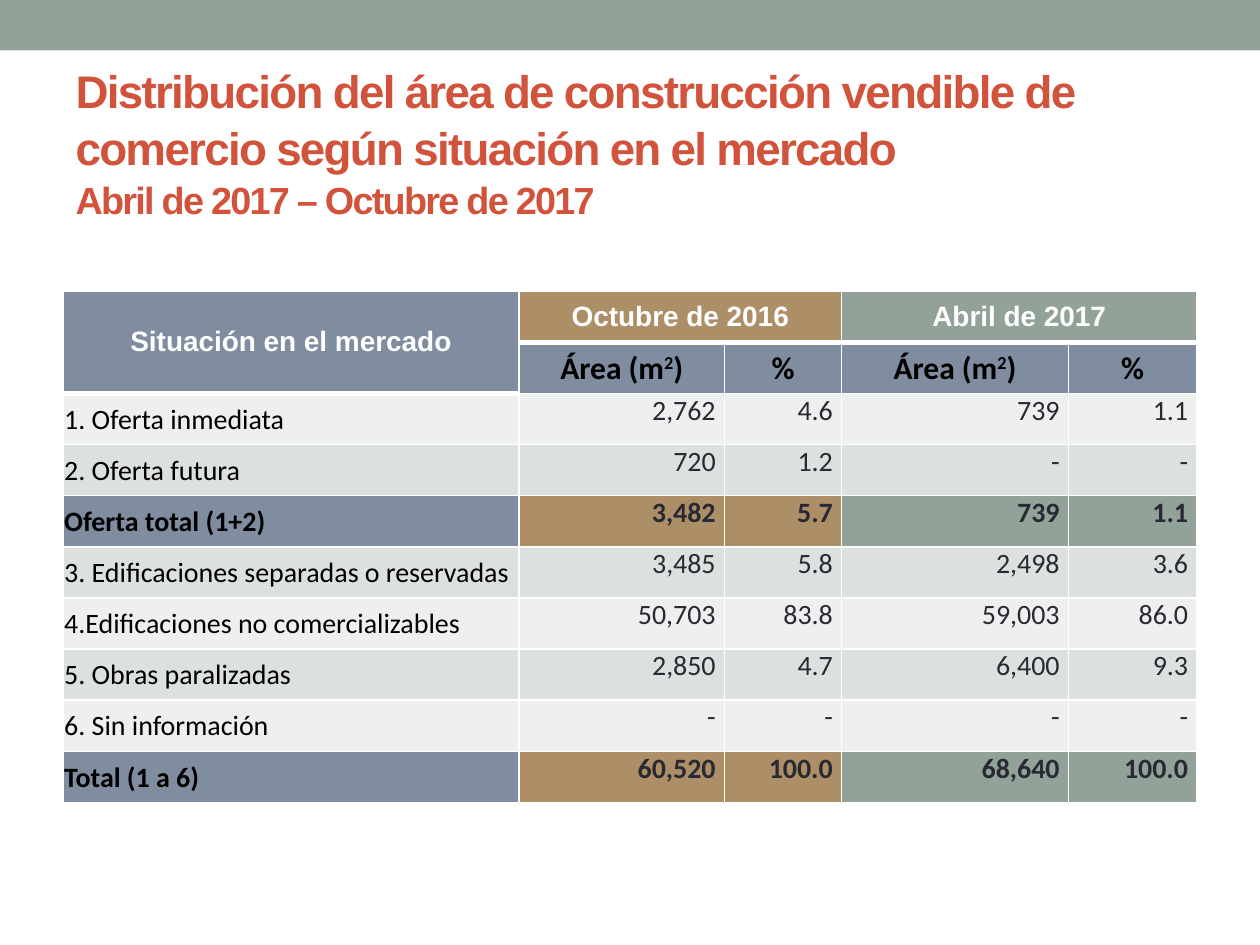
import pptx
import pptx.util
import pptx.dml.color
import pptx.enum.shapes
import pptx.enum.text
import pptx.oxml.ns
import lxml.etree

Inches = pptx.util.Inches
Pt = pptx.util.Pt
RGBColor = pptx.dml.color.RGBColor
Align = pptx.enum.text.PP_ALIGN
Anchor = pptx.enum.text.MSO_ANCHOR
qn = pptx.oxml.ns.qn

SAGE = RGBColor(0x93, 0xA2, 0x99)
SLATE = RGBColor(0x80, 0x8D, 0xA0)
TAN = RGBColor(0xAD, 0x8F, 0x67)
RUST = RGBColor(0xD2, 0x53, 0x3C)
PALE = RGBColor(0xEE, 0xF0, 0xEF)
GREY = RGBColor(0xDC, 0xE0, 0xDE)
INK = RGBColor(0x29, 0x29, 0x34)
BLACK = RGBColor(0, 0, 0)
WHITE = RGBColor(0xFF, 0xFF, 0xFF)

WIDTHS = [3.62, 1.63, 0.93, 1.8, 1.02]
HEADS = {0: "Situación en el mercado", 1: "Octubre de 2016", 3: "Abril de 2017"}
UNITS = [("Área (m", "2", ")"), ("%",)] * 2
ROWS = [
    ("1. Oferta inmediata", "2,762", "4.6", "739", "1.1"),
    ("2. Oferta futura", "720", "1.2", "-", "-"),
    ("Oferta total (1+2)", "3,482", "5.7", "739", "1.1"),
    ("3. Edificaciones separadas o reservadas", "3,485", "5.8", "2,498", "3.6"),
    ("4.Edificaciones no comercializables", "50,703", "83.8", "59,003", "86.0"),
    ("5. Obras paralizadas", "2,850", "4.7", "6,400", "9.3"),
    ("6. Sin información", "-", "-", "-", "-"),
    ("Total (1 a 6)", "60,520", "100.0", "68,640", "100.0"),
]
SUMS = [SLATE, TAN, TAN, SAGE, SAGE]

# Format values: font, then cell
HEAD = {"name": "Arial", "size": Pt(16), "bold": True}
UNIT = {"name": "Calibri", "size": Pt(18), "bold": True}
BODY = {"name": "Calibri", "size": Pt(16)}
MID = {"vertical_anchor": Anchor.MIDDLE}
TIGHT = {"margin_left": Inches(0.01), "margin_right": Inches(0.01),
         "margin_top": Inches(0.01), "margin_bottom": 0, **MID}
DATA = {"margin_left": Inches(0.07), "margin_right": Inches(0.07),
        "margin_top": 0, "margin_bottom": 0, "vertical_anchor": Anchor.TOP}


def apply(item, values):
    for key, value in values.items():
        setattr(item, key, value)


def add_run(para, text, font, color):
    run = para.add_run()
    run.text = text
    apply(run.font, font)
    run.font.color.rgb = color
    return run


def place(item, box):
    apply(item, dict(zip(("left", "top", "width", "height"), map(Inches, box))))


def add_bar(slide, box):
    bar = slide.shapes.add_shape(pptx.enum.shapes.MSO_SHAPE.RECTANGLE,
                                 *map(Inches, box))
    bar.shadow.inherit = False
    bar.fill.solid()
    bar.fill.fore_color.rgb = SAGE
    bar.line.fill.background()


def add_title(slide, box):
    title = slide.shapes.title
    place(title, box)
    frame = title.text_frame
    apply(frame, {"word_wrap": True, "vertical_anchor": Anchor.MIDDLE,
                  "auto_size": pptx.enum.text.MSO_AUTO_SIZE.NONE})
    para = frame.paragraphs[0]
    apply(para, {"alignment": Align.LEFT, "line_spacing": 1.05})
    lines = [("Distribución del área de construcción vendible de "
              "comercio según situación en el mercado", 26.1),
             ("Abril de 2017 – Octubre de 2017", 21.6)]
    for i, (text, size) in enumerate(lines):
        if i:
            para.add_line_break()
        font = {"name": "Arial", "size": Pt(size), "bold": True}
        run = add_run(para, text, font, RUST)
        run.font._element.set("spc", "-100")


def add_edges(cell, top, base):
    props = cell._tc.get_or_add_tcPr()
    sides = [("a:lnL", 1), ("a:lnR", 1), ("a:lnT", top), ("a:lnB", base)]
    for i, (tag, size) in enumerate(sides):
        line = lxml.etree.Element(qn(tag), w=str(Pt(size)))
        fill = lxml.etree.SubElement(line, qn("a:solidFill"))
        lxml.etree.SubElement(fill, qn("a:srgbClr"), val=str(WHITE))
        props.insert(i, line)


def fill_cell(cell, parts, font, color, back, align, form):
    apply(cell, form)
    cell.fill.solid()
    cell.fill.fore_color.rgb = back
    para = cell.text_frame.paragraphs[0]
    para.alignment = align
    for i, text in enumerate(parts):
        run = add_run(para, text, font, color)
        if i == 1:  # raised power
            run.font._element.set("baseline", "30000")


def add_grid(slide, box):
    count = len(ROWS) + 2
    grid = slide.shapes.add_table(count, len(WIDTHS), *map(Inches, box)).table
    for col, width in zip(grid.columns, WIDTHS):
        col.width = Inches(width)
    for row in grid.rows:
        row.height = Inches(box[3] / count)

    # Heading rows
    grid.cell(0, 0).merge(grid.cell(1, 0))
    for c in (1, 3):
        grid.cell(0, c).merge(grid.cell(0, c + 1))
    for c, text in HEADS.items():
        fill_cell(grid.cell(0, c), [text], HEAD, WHITE, SUMS[c],
                  Align.CENTER, MID)
    for c, parts in enumerate(UNITS, 1):
        fill_cell(grid.cell(1, c), parts, UNIT, BLACK, SLATE,
                  Align.CENTER, TIGHT)

    # Body rows: banded, with coloured totals
    for r, row in enumerate(ROWS):
        total = "otal" in row[0]
        font = {**BODY, "bold": total}
        band = GREY if r % 2 else PALE
        for c, text in enumerate(row):
            look = ((INK, Align.RIGHT, DATA) if c
                    else (BLACK, Align.JUSTIFY, TIGHT))
            color, align, form = look
            back = SUMS[c] if total else band
            fill_cell(grid.cell(r + 2, c), [text], font, color, back,
                      align, form)

    # Borders: a thick rule below each top heading
    for r in range(count):
        for c in range(len(WIDTHS)):
            thick = 1 if c == 0 else 0
            top = 3 if r == thick + 1 else 1
            base = 3 if r == thick or r == c == 0 else 1
            add_edges(grid.cell(r, c), top, base)


def main():
    deck = pptx.Presentation()
    deck.slide_width, deck.slide_height = Inches(10), Inches(7.5)
    slide = deck.slides.add_slide(deck.slide_layouts[5])
    add_bar(slide, (0, 0, 10, 0.4))
    add_title(slide, (0.5, 0.58, 9, 1.08))
    add_grid(slide, (0.5, 2.31, 9, 4.06))
    deck.save("out.pptx")


if __name__ == "__main__":
    main()
